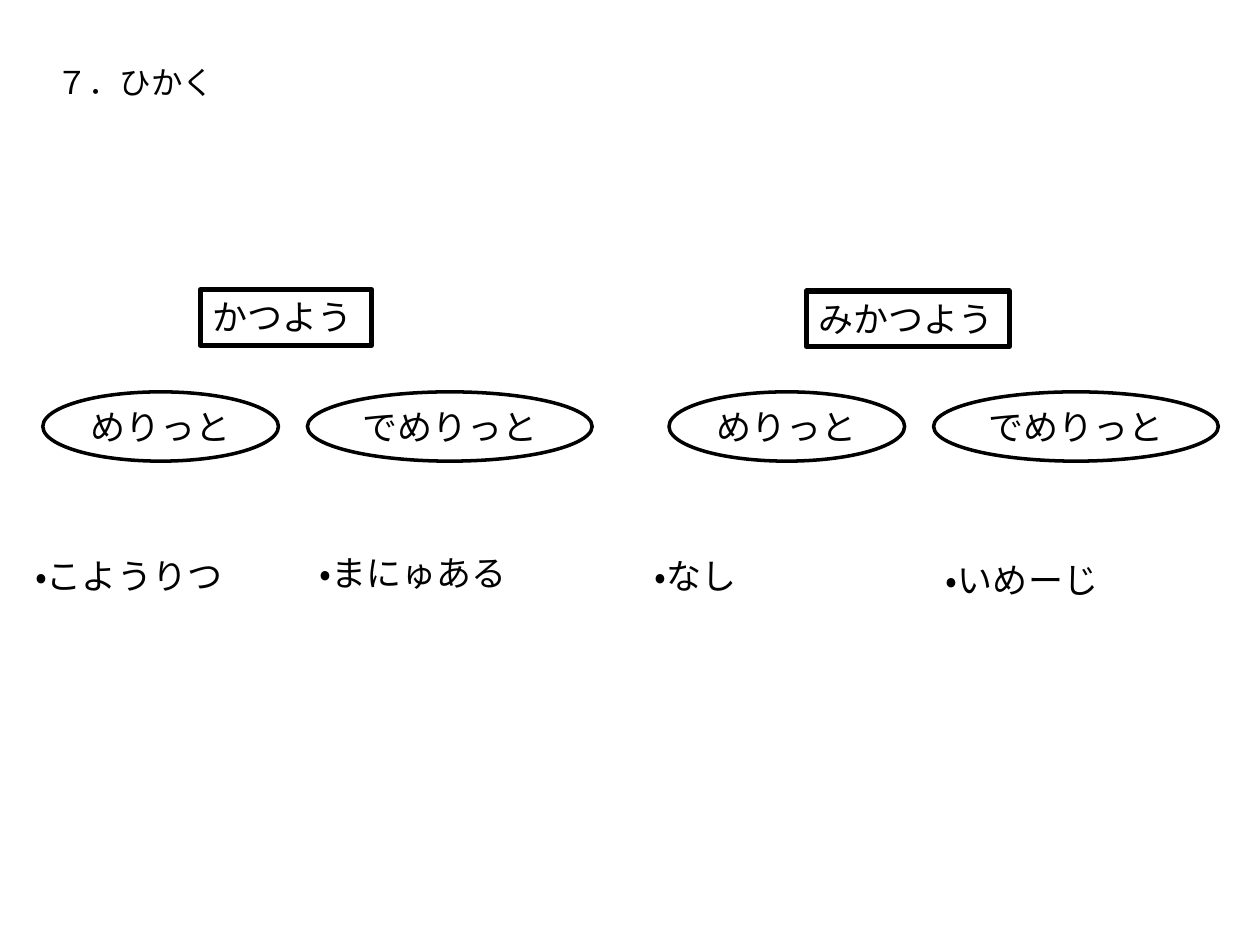
from pptx import Presentation
from pptx import util as u
from pptx.dml.color import RGBColor
from pptx.enum import lang, shapes, text

COLOURS = {"ink": "000000", "paper": "FFFFFF"}
FONT = "Calibri"
WIDTH, HEIGHT = 10, 7.5

# Two comparison groups, each with a merit and a demerit column
GROUP_LEFTS = (0.34, 5.31)
DEMERIT_OFFSET = 2.1
ELLIPSES = (("めりっと", 0, 1.87), ("でめりっと", DEMERIT_OFFSET, 2.26))
ELLIPSE_TOP, ELLIPSE_HEIGHT = 3.11, 0.55
LABEL_HEIGHT = 0.44
POINT_WIDTH = 1.87

HEADINGS = (("かつよう", 1.59, 2.3, 1.36), ("みかつよう", 6.4, 2.31, 1.61))
POINTS = (
    ("・こようりつ", GROUP_LEFTS[0] - 0.16, 4.35),
    ("・まにゅある", GROUP_LEFTS[0] + DEMERIT_OFFSET, 4.33),
    ("・なし", GROUP_LEFTS[1] - 0.21, 4.35),
    ("・いめーじ", GROUP_LEFTS[1] + DEMERIT_OFFSET, 4.38),
)


def colour(name):
    return RGBColor.from_string(COLOURS[name])


def write(box, words, size=20, align=text.PP_ALIGN.LEFT,
          anchor=text.MSO_ANCHOR.TOP):
    frame = box.text_frame
    frame.word_wrap = True
    frame.vertical_anchor = anchor
    frame.text = words
    para = frame.paragraphs[0]
    para.alignment = align
    for span in para.runs:
        span.font.name = FONT
        span.font.size = u.Pt(size)
        span.font.color.rgb = colour("ink")
        span.font.language_id = lang.MSO_LANGUAGE_ID.JAPANESE


def add_label(page, words, left, top, width, height=LABEL_HEIGHT, size=20):
    box = page.shapes.add_textbox(*map(u.Inches, (left, top, width, height)))
    write(box, words, size)
    return box


def add_heading(page, words, left, top, width):
    box = add_label(page, words, left, top, width)
    box.line.color.rgb = colour("ink")
    box.line.width = u.Pt(3)


def add_ellipse(page, words, left, width):
    box = page.shapes.add_shape(
        shapes.MSO_SHAPE.OVAL,
        *map(u.Inches, (left, ELLIPSE_TOP, width, ELLIPSE_HEIGHT)))
    box.shadow.inherit = False
    box.fill.background()
    box.line.color.rgb = colour("ink")
    box.line.width = u.Pt(2)
    write(box, words, align=text.PP_ALIGN.CENTER,
          anchor=text.MSO_ANCHOR.MIDDLE)


def main():
    deck = Presentation()
    deck.slide_width, deck.slide_height = u.Inches(WIDTH), u.Inches(HEIGHT)
    page = deck.slides.add_slide(deck.slide_layouts[6])
    page.background.fill.solid()
    page.background.fill.fore_color.rgb = colour("paper")

    # Title
    add_label(page, "７．ひかく", 0.35, 0.45, 1.92, 0.4, size=18)

    # Framed group headings
    for words, left, top, width in HEADINGS:
        add_heading(page, words, left, top, width)

    # Merit and demerit ellipses
    for group_left in GROUP_LEFTS:
        for words, offset, width in ELLIPSES:
            add_ellipse(page, words, group_left + offset, width)

    # Points under each column
    for words, left, top in POINTS:
        add_label(page, words, left, top, POINT_WIDTH)

    deck.save("out.pptx")


if __name__ == "__main__":
    main()
